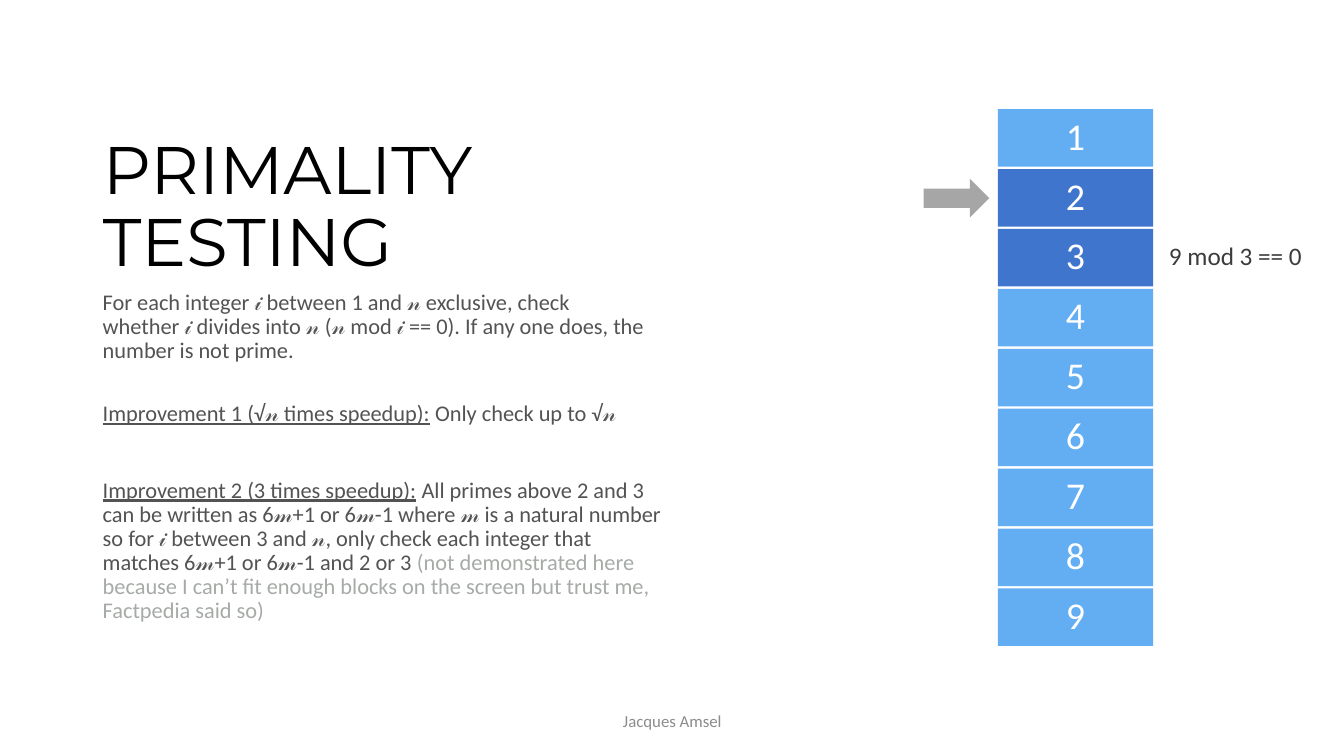
from dataclasses import dataclass

from pptx import Presentation
from pptx.dml.color import RGBColor
from pptx.enum.shapes import MSO_SHAPE
from pptx.enum.text import MSO_ANCHOR, MSO_AUTO_SIZE, PP_ALIGN
from pptx.util import Cm, Pt

RECTANGLE, RIGHT_ARROW = MSO_SHAPE.RECTANGLE, MSO_SHAPE.RIGHT_ARROW
LEFT, CENTER = PP_ALIGN.LEFT, PP_ALIGN.CENTER
TOP, MIDDLE, BOTTOM = MSO_ANCHOR.TOP, MSO_ANCHOR.MIDDLE, MSO_ANCHOR.BOTTOM
NO_AUTOFIT = MSO_AUTO_SIZE.NONE
TITLE_ONLY = 5


@dataclass(frozen=True)
class Theme:
    heading_font: str = "Montserrat"
    body_font: str = "Calibri"
    title: str = "000000"
    body: str = "535353"
    aside: str = "A6ABA7"
    footer: str = "8C8C8C"
    result: str = "3C3C3C"
    number: str = "FFFFFF"
    block: str = "63ADF2"
    checked_block: str = "4075CD"
    pointer: str = "A6A6A6"
    title_size: int = 48
    body_size: int = 16
    footer_size: int = 12
    number_size: int = 27
    result_size: int = 18


def add_run(paragraph, text, *, font, size, color, underline=False):
    run = paragraph.add_run()
    run.text = text
    run.font.name = font
    run.font.size = Pt(size)
    run.font.color.rgb = RGBColor.from_string(color)
    run.font.underline = underline


def write(frame, paragraphs, *, font, size, color, align=LEFT, anchor=TOP,
          line_spacing=1.0, wrap=True):
    """Fill a frame from (space before, [(text, run overrides), ...]) pairs."""
    frame.auto_size = NO_AUTOFIT
    frame.word_wrap = wrap
    frame.vertical_anchor = anchor
    for index, (space_before, runs) in enumerate(paragraphs):
        paragraph = frame.add_paragraph() if index else frame.paragraphs[0]
        paragraph.alignment = align
        paragraph.line_spacing = line_spacing
        paragraph.space_before = Pt(space_before)
        for text, overrides in runs:
            add_run(paragraph, text,
                    **{"font": font, "size": size, "color": color, **overrides})


def plain(text):
    return [(0, [(text, {})])]


class SlideBuilder:
    def __init__(self, presentation, theme):
        self.theme = theme
        self.slide = presentation.slides.add_slide(
            presentation.slide_layouts[TITLE_ONLY])

    def title(self, text, left, top, width, height):
        heading = self.slide.shapes.title
        heading.left, heading.top = Cm(left), Cm(top)
        heading.width, heading.height = Cm(width), Cm(height)
        write(heading.text_frame, plain(text), font=self.theme.heading_font,
              size=self.theme.title_size, color=self.theme.title,
              anchor=BOTTOM, line_spacing=0.9)

    def text(self, paragraphs, left, top, width, height, **style):
        box = self.slide.shapes.add_textbox(
            Cm(left), Cm(top), Cm(width), Cm(height))
        write(box.text_frame, paragraphs, font=self.theme.body_font, **style)

    def shape(self, preset, left, top, width, height, fill):
        shape = self.slide.shapes.add_shape(
            preset, Cm(left), Cm(top), Cm(width), Cm(height))
        shape.shadow.inherit = False
        shape.fill.solid()
        shape.fill.fore_color.rgb = RGBColor.from_string(fill)
        shape.line.fill.background()
        return shape

    def number_block(self, number, left, top, width, height, fill):
        block = self.shape(RECTANGLE, left, top, width, height, fill)
        write(block.text_frame, plain(str(number)), font=self.theme.body_font,
              size=self.theme.number_size, color=self.theme.number,
              align=CENTER, anchor=MIDDLE, line_spacing=0.9)


def main():
    presentation = Presentation()
    presentation.slide_width, presentation.slide_height = Cm(33.87), Cm(19.05)
    theme = Theme()
    builder = SlideBuilder(presentation, theme)

    text_left, text_width = 2.34, 14.6
    builder.title("PRIMALITY TESTING", text_left, 2.77, text_width, 4.45)

    underlined = {"underline": True}
    explanation = [
        (10, [("For each integer 𝒾 between 1 and 𝓃 exclusive, check whether "
               "𝒾 divides into 𝓃 (𝓃 mod 𝒾 == 0). If any one does, the number "
               "is not prime.", {})]),
        (27.5, [("Improvement 1 (√𝓃 times speedup):", underlined),
                (" Only check up to √𝓃", {})]),
        (37.5, [("Improvement 2 (3 times speedup):", underlined),
                (" All primes above 2 and 3 can be written as 6𝓂+1 or 6𝓂-1 "
                 "where 𝓂 is a natural number so for 𝒾 between 3 and 𝓃, only "
                 "check each integer that matches 6𝓂+1 or 6𝓂-1 and 2 or 3 ", {}),
                ("(not demonstrated here because I can’t fit enough blocks on "
                 "the screen but trust me, Factpedia said so)",
                 {"color": theme.aside})]),
    ]
    builder.text(explanation, text_left, 7.21, text_width, 9.09,
                 size=theme.body_size, color=theme.body, line_spacing=0.9)
    builder.text(plain("Jacques Amsel"), 11.23, 17.65, 11.43, 1.02,
                 size=theme.footer_size, color=theme.footer,
                 align=CENTER, anchor=MIDDLE)

    first_top, pitch = 2.75, 1.51
    checked_numbers = {2, 3}
    for number in range(1, 10):
        fill = theme.checked_block if number in checked_numbers else theme.block
        builder.number_block(number, 25.15, first_top + (number - 1) * pitch,
                             3.91, 1.45, fill)

    builder.shape(RIGHT_ARROW, 23.28, 4.51, 1.65, 0.97, theme.pointer)
    builder.text(plain("9 mod 3 == 0"), 29.21, 5.94, 3.91, 1.02,
                 size=theme.result_size, color=theme.result, wrap=False)

    presentation.save("out.pptx")


if __name__ == "__main__":
    main()
